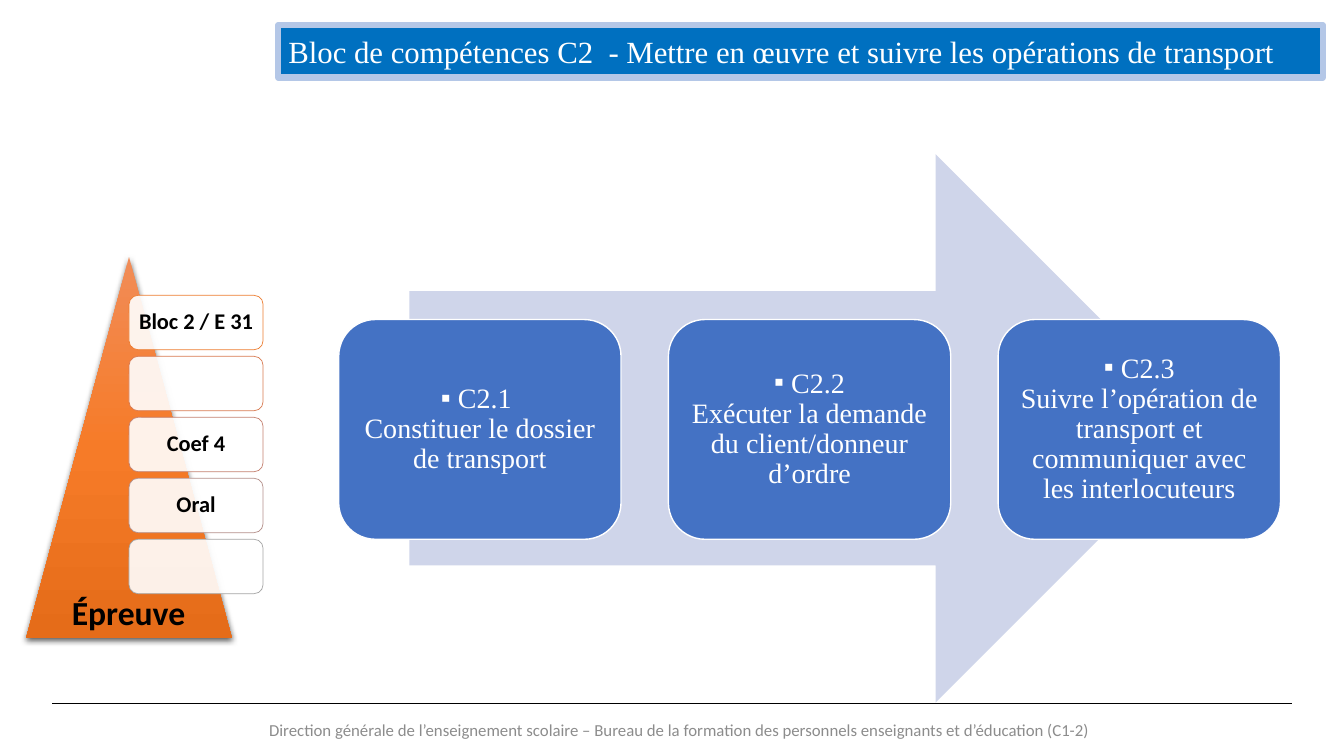
from lxml import etree
from pptx import Presentation
from pptx.dml.color import RGBColor
from pptx.enum.shapes import MSO_CONNECTOR, MSO_SHAPE as Shape
from pptx.enum.text import MSO_ANCHOR as Anchor, MSO_AUTO_SIZE, PP_ALIGN as Align
from pptx.oxml import parse_xml
from pptx.oxml.ns import nsdecls, qn
from pptx.util import Inches, Pt

COLORS = {
    "white": "FFFFFF",
    "black": "000000",
    "footer": "8C8C8C",
    "banner": "0070C0",
    "banner_edge": "B4C7E7",
    "arrow": "CFD5EA",
    "card": "4472C4",
}
PYRAMID_STOPS = [(0, "F18C57"), (50, "F67B28"), (100, "E56C19")]
EXAM_LABELS = [
    ("Bloc 2 / E 31", "ED7D31"),
    ("", "D87A51"),
    ("Coef 4", "C48170"),
    ("Oral", "B4908B"),
    ("", "A5A5A5"),
]
SKILLS = [
    " C2.1 \vConstituer le dossier de transport",
    " C2.2\vExécuter la demande du client/donneur d’ordre",
    " C2.3\vSuivre l’opération de transport et communiquer avec les interlocuteurs",
]
TITLE = "Bloc de compétences C2  - Mettre en œuvre et suivre les opérations de transport"
FOOTER = (
    "Direction générale de l’enseignement scolaire – Bureau de la formation "
    "des personnels enseignants et d’éducation (C1-2)"
)


def rgb(color):
    return RGBColor.from_string(color)


def paint(shape, fill, line=None, width=1):
    shape.fill.solid()
    shape.fill.fore_color.rgb = rgb(fill)
    if line:
        shape.line.color.rgb = rgb(line)
        shape.line.width = Pt(width)
    else:
        shape.line.fill.background()


def add_shape(page, kind, left, top, width, height):
    shape = page.shapes.add_shape(
        kind, Inches(left), Inches(top), Inches(width), Inches(height))
    shape.shadow.inherit = False
    return shape


def write(shape, text, size, font, color, bold=False, align=Align.CENTER,
          inset=None, spacing=None, bullet=None, anchor=Anchor.MIDDLE):
    frame = shape.text_frame
    frame.word_wrap = True
    frame.auto_size = MSO_AUTO_SIZE.NONE
    frame.vertical_anchor = anchor
    if inset is not None:
        frame.margin_left = frame.margin_right = Inches(inset)
        frame.margin_top = frame.margin_bottom = Inches(inset)
    para = frame.paragraphs[0]
    para.text = text
    para.alignment = align
    if spacing:
        para.line_spacing = spacing
    if bullet:
        properties = para._p.get_or_add_pPr()
        properties.set("marL", "0")
        properties.set("indent", "0")
        etree.SubElement(properties, qn("a:buFont"), typeface="Arial")
        etree.SubElement(properties, qn("a:buChar"), char=bullet)
    para.font.size = Pt(size)
    para.font.name = font
    para.font.bold = bold
    para.font.color.rgb = rgb(color)


def add_label(page, left, top, width, height, text, **style):
    box = page.shapes.add_textbox(
        Inches(left), Inches(top), Inches(width), Inches(height))
    write(box, text, **style)


def add_banner(page):
    title = page.shapes.title
    title.left, title.top = Inches(2.76), Inches(0.25)
    title.width, title.height = Inches(10.36), Inches(0.52)
    title._element.spPr.find(qn("a:xfrm")).addnext(parse_xml(
        f'<a:prstGeom {nsdecls("a")} prst="roundRect"><a:avLst/></a:prstGeom>'))
    paint(title, COLORS["banner"], COLORS["banner_edge"], 4.5)
    write(title, TITLE, 22, "Times New Roman", COLORS["white"], align=Align.LEFT)


def add_pyramid(page):
    pyramid = add_shape(page, Shape.ISOSCELES_TRIANGLE, 0.26, 2.55, 2.04, 3.78)
    pyramid.line.fill.background()
    stops = "".join(
        f'<a:gs pos="{place * 1000}"><a:srgbClr val="{color}"/></a:gs>'
        for place, color in PYRAMID_STOPS)
    properties = pyramid._element.spPr
    properties.find(qn("a:prstGeom")).addnext(parse_xml(
        f'<a:gradFill {nsdecls("a")}><a:gsLst>{stops}</a:gsLst>'
        '<a:lin ang="5400000" scaled="0"/></a:gradFill>'))
    properties.find(qn("a:effectLst")).append(parse_xml(
        f'<a:outerShdw {nsdecls("a")} blurRad="{Pt(4.5)}" dist="{Pt(1.5)}" '
        f'dir="5400000" rotWithShape="0"><a:srgbClr val="{COLORS["black"]}">'
        '<a:alpha val="63000"/></a:srgbClr></a:outerShdw>'))


def add_exam_label(page, top, text, edge):
    pill = add_shape(page, Shape.ROUNDED_RECTANGLE, 1.28, top, 1.33, 0.54)
    paint(pill, COLORS["white"], edge, 0.5)
    fill_color = pill._element.spPr.find(qn("a:solidFill"))[0]
    etree.SubElement(fill_color, qn("a:alpha"), val="90000")
    if text:
        write(pill, text, 16, "Calibri", COLORS["black"], bold=True,
              inset=0.07, spacing=0.9)


def add_skill(page, left, text):
    card = add_shape(page, Shape.ROUNDED_RECTANGLE, left, 3.17, 2.8, 2.18)
    paint(card, COLORS["card"], COLORS["white"], 1)
    write(card, text, 20, "Times New Roman", COLORS["white"],
          inset=0.08, spacing=0.9, bullet="▪")


def add_footer(page):
    rule = page.shapes.add_connector(
        MSO_CONNECTOR.STRAIGHT, Inches(0.52), Inches(6.98), Inches(12.81), Inches(6.98))
    rule.line.color.rgb = rgb(COLORS["black"])
    rule.line.width = Pt(0.8)
    etree.SubElement(rule._element.spPr, qn("a:effectLst"))
    add_label(page, 0.52, 6.98, 12.44, 0.52, FOOTER,
              size=12, font="Calibri", color=COLORS["footer"])


def main():
    deck = Presentation()
    deck.slide_width, deck.slide_height = Inches(13.33), Inches(7.5)
    page = deck.slides.add_slide(deck.slide_layouts[5])

    add_banner(page)
    add_footer(page)
    add_pyramid(page)
    for row, (text, edge) in enumerate(EXAM_LABELS):
        add_exam_label(page, 2.93 + row * 0.605, text, edge)
    add_label(page, 0.34, 5.82, 1.87, 0.5, "Épreuve", size=24, font="Calibri",
              color=COLORS["black"], bold=True, anchor=Anchor.TOP)

    arrow = add_shape(page, Shape.RIGHT_ARROW, 4.06, 1.53, 7.94, 5.44)
    paint(arrow, COLORS["arrow"])
    for column, text in enumerate(SKILLS):
        add_skill(page, 3.36 + column * 3.27, text)

    deck.save("out.pptx")


if __name__ == "__main__":
    main()
